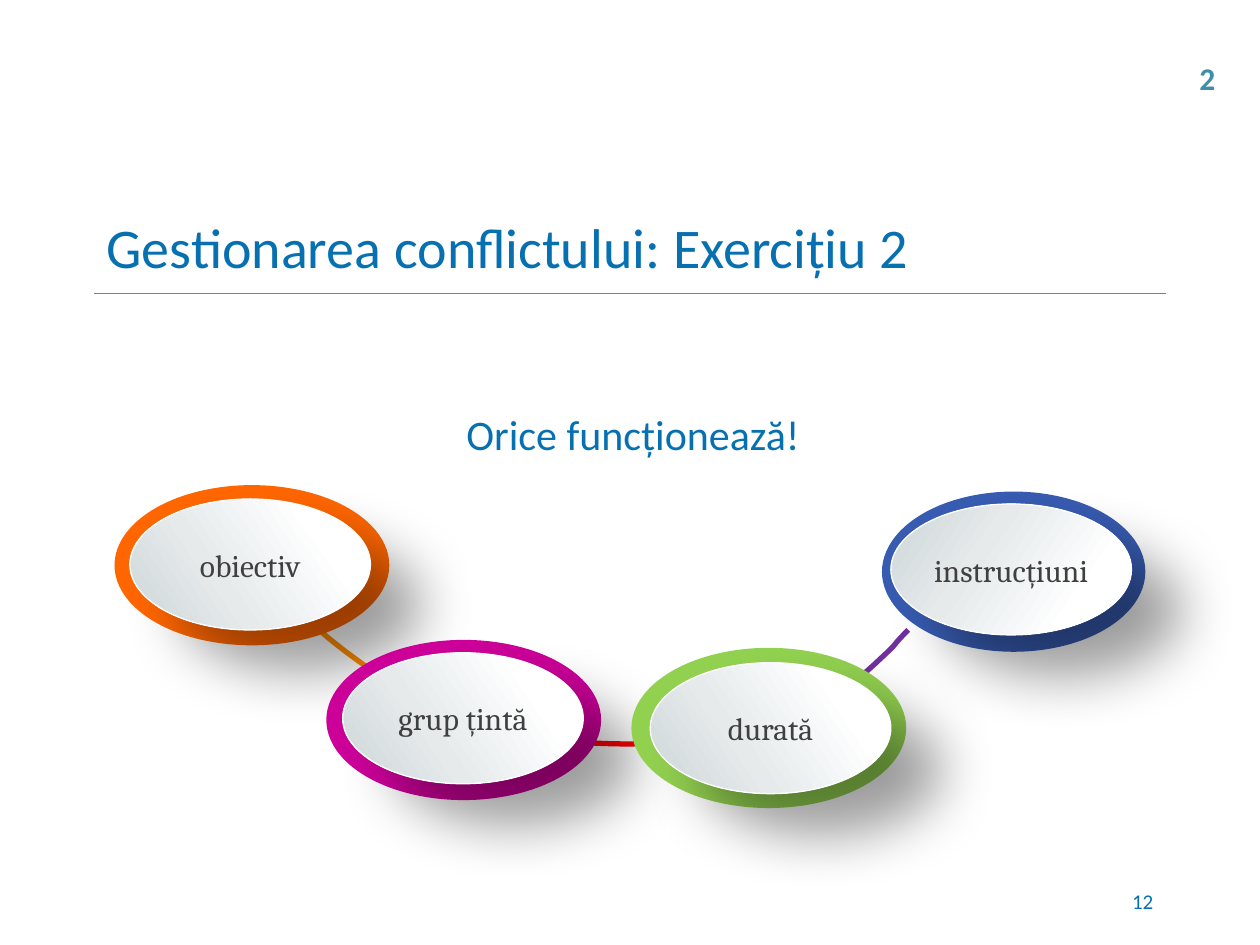
from lxml import etree
from pptx import Presentation
from pptx.dml.color import RGBColor
from pptx.enum.shapes import MSO_CONNECTOR, MSO_SHAPE
from pptx.enum.text import MSO_ANCHOR, PP_ALIGN
from pptx.oxml.ns import qn
from pptx.util import Cm, Pt

OVAL = MSO_SHAPE.OVAL
STRAIGHT = MSO_CONNECTOR.STRAIGHT
TOP, MIDDLE = MSO_ANCHOR.TOP, MSO_ANCHOR.MIDDLE
LEFT, CENTER, RIGHT = PP_ALIGN.LEFT, PP_ALIGN.CENTER, PP_ALIGN.RIGHT

BLUE = RGBColor(0x07, 0x70, 0xB1)
TEAL = RGBColor(0x3E, 0x8E, 0xA9)
SKY = RGBColor(0x0B, 0xA7, 0xDF)
NAVY = RGBColor(0x37, 0x5B, 0xB0)
ORANGE = RGBColor(0xFF, 0x66, 0x00)
AMBER = RGBColor(0xFF, 0x8A, 0x00)
PINK = RGBColor(0xCC, 0x00, 0x99)
GREEN = RGBColor(0x92, 0xD0, 0x50)
PURPLE = RGBColor(0x70, 0x30, 0xA0)
RED = RGBColor(0xFF, 0x00, 0x00)
GRAY = RGBColor(0x40, 0x40, 0x40)
SILVER = RGBColor(0xCD, 0xD5, 0xD8)
PALE = RGBColor(0xE6, 0xEA, 0xEB)
WHITE = RGBColor(0xFF, 0xFF, 0xFF)
BLACK = RGBColor(0x00, 0x00, 0x00)

SHEEN = [(0, SILVER), (37, PALE), (77, WHITE), (100, WHITE)]
INNER = (4.85, 2.64)


def node(parent, tag, **attrs):
    return etree.SubElement(parent, qn(tag), {k: str(v) for k, v in attrs.items()})


def write(frame, text, size=18, color=BLUE, font="Calibri", bold=False,
          align=LEFT, anchor=TOP, wrap=True, spacing=None, after=None):
    frame.word_wrap = wrap
    frame.vertical_anchor = anchor
    para = frame.paragraphs[0]
    para.alignment = align
    para.line_spacing = spacing
    para.space_after = after
    run = para.add_run()
    run.text = text
    run.font.name, run.font.size = font, Pt(size)
    run.font.bold, run.font.color.rgb = bold, color


def label(slide, box, text, **style):
    shape = slide.shapes.add_textbox(*map(Cm, box))
    write(shape.text_frame, text, **style)


def oval(slide, box, flip):
    shape = slide.shapes.add_shape(OVAL, *map(Cm, box))
    shape.shadow.inherit = False
    if flip:
        shape._element.spPr.find(qn("a:xfrm")).set("flipH", "1")
    return shape


def shine(shape, flip):
    """Give the oval a silver sheen and a soft shadow to the lower right."""
    props = shape._element.spPr
    stops = [(100 - at, tone) for at, tone in reversed(SHEEN)] if flip else SHEEN
    fill = etree.Element(qn("a:gradFill"), rotWithShape="1")
    group = node(fill, "a:gsLst")
    for at, tone in stops:
        node(node(group, "a:gs", pos=at * 1000), "a:srgbClr", val=tone)
    node(fill, "a:lin", ang=35 * 60000, scaled=0)
    props.find(qn("a:prstGeom")).addnext(fill)
    shade = node(props.find(qn("a:effectLst")), "a:outerShdw", blurRad=Pt(33),
                 dist=Pt(36.7), dir=39 * 60000, algn="tl", rotWithShape=0)
    node(node(shade, "a:srgbClr", val=BLACK), "a:alpha", val=38000)


def badge(slide, box, inset, text, color, flip=True):
    """Draw a coloured oval with a silver, labelled oval inside it."""
    ring = oval(slide, box, flip)
    ring.fill.solid()
    ring.fill.fore_color.rgb = color
    ring.line.fill.background()

    face = oval(slide, (box[0] + inset[0], box[1] + inset[1], *INNER), flip)
    shine(face, flip)
    face.line.color.rgb, face.line.width = WHITE, Pt(0.75)
    frame = face.text_frame
    frame.margin_left = frame.margin_right = 0
    frame.margin_top = frame.margin_bottom = 0
    write(frame, text, color=GRAY, font="Cambria", align=CENTER, anchor=MIDDLE)


def bezier(points, steps=10):
    """Yield points along joined cubic curves."""
    for i in range(0, len(points) - 1, 3):
        a, b, c, d = points[i:i + 4]
        for t in (n / steps for n in range(1, steps + 1)):
            u = 1 - t
            yield tuple(Cm(u**3 * p + 3 * u * u * t * q + 3 * u * t * t * r + t**3 * s)
                        for p, q, r, s in zip(a, b, c, d))


def arc(slide, points, color):
    start = map(Cm, points[0])
    pen = slide.shapes.build_freeform(*start)
    pen.add_line_segments(list(bezier(points)), close=False)
    shape = pen.convert_to_shape()
    shape.shadow.inherit = False
    shape.fill.background()
    shape.line.color.rgb, shape.line.width = color, Pt(3)


def header(slide, box, text):
    x, y, w, h = box
    rule = slide.shapes.add_connector(STRAIGHT, Cm(x), Cm(y + h), Cm(x + w), Cm(y + h))
    rule.line.color.rgb, rule.line.width = SKY, Pt(0.75)
    node(rule._element.spPr, "a:effectLst")
    label(slide, box, text, size=32, anchor=MIDDLE)


def chain(slide, x, y):
    """Draw the four linked badges from the top left corner x, y."""
    def move(*points):
        return [(x + a, y + b) for a, b in points]

    wide, slim = (5.54, 3.23), (5.31, 3.23)
    arc(slide, move((16, 2.92), (15.9, 3.02), (15.8, 3.12), (15.7, 3.25),
                    (15.37, 3.58), (15.01, 3.89), (14.66, 4.19),
                    (14.2, 4.47), (13.72, 4.72), (13.18, 4.93)), PURPLE)
    badge(slide, (x + 15.47, y + 0.13, *slim), (0.18, 0.25), "instrucțiuni", NAVY, False)
    arc(slide, move((9.09, 5.16), (9.65, 5.21), (10.21, 5.23), (10.77, 5.21),
                    (11.05, 5.18), (11.33, 5.16), (11.61, 5.1)), RED)
    arc(slide, move((3.96, 2.77), (4.5, 3.28), (5.16, 3.73), (5.87, 4.19)), AMBER)
    badge(slide, (x, y, *wide), (0.31, 0.28), "obiectiv", ORANGE)
    badge(slide, (x + 4.27, y + 3.12, *wide), (0.33, 0.26), "grup țintă", PINK)
    badge(slide, (x + 10.42, y + 3.28, *wide), (0.38, 0.3), "durată", GREEN)


def main():
    deck = Presentation()
    deck.slide_width, deck.slide_height = Cm(25.4), Cm(19.05)
    slide = deck.slides.add_slide(deck.slide_layouts[6])
    header(slide, (1.9, 4.02, 21.6, 1.9), "Gestionarea conflictului: Exercițiu 2")
    label(slide, (18.2, 17.65, 5.3, 1.02), "12", size=12, align=RIGHT, anchor=MIDDLE)
    chain(slide, 2.31, 9.78)
    label(slide, (6.58, 7.95, 12.37, 1.37), "Orice funcționează!", size=24,
          align=CENTER, spacing=1.15, after=Pt(6))
    label(slide, (23.93, 1.07, 0.84, 1.02), "2", color=TEAL, bold=True, wrap=False)
    deck.save("out.pptx")


if __name__ == "__main__":
    main()
